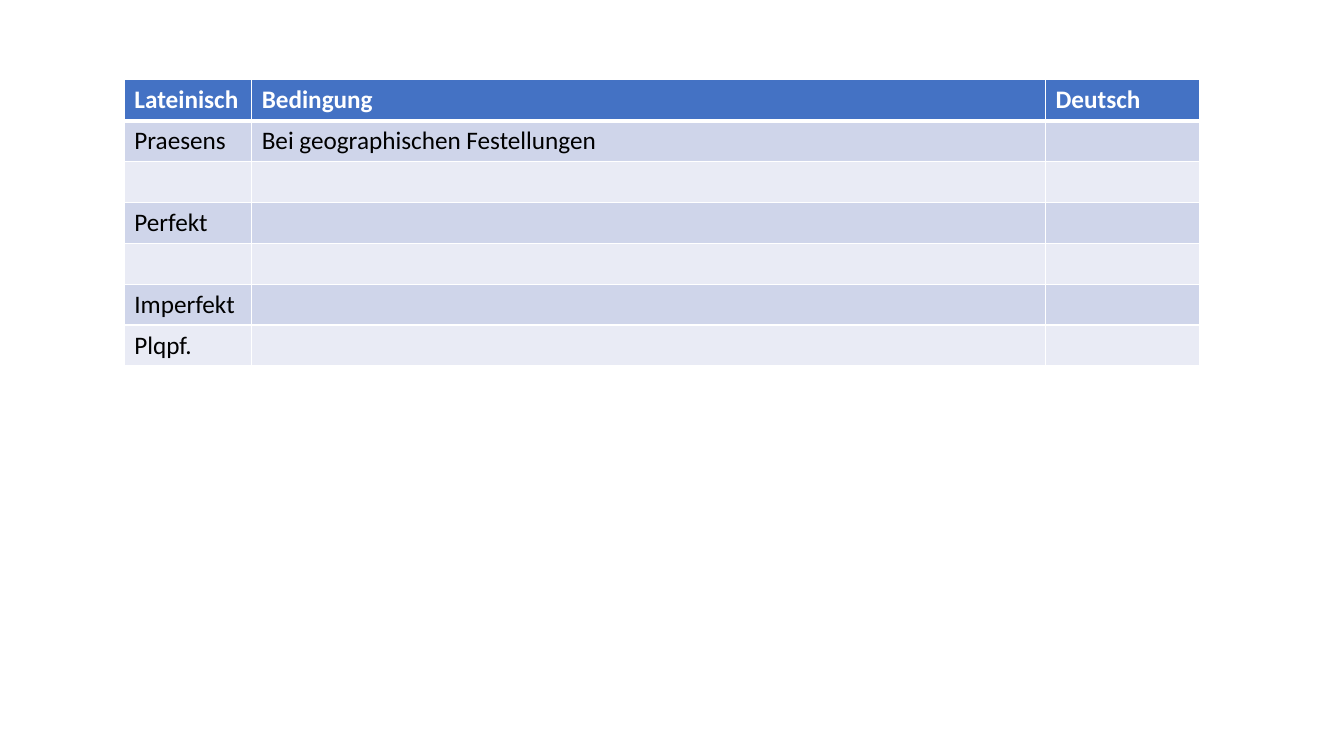
from lxml import etree
from pptx import Presentation
from pptx import util as u
from pptx.dml import color
from pptx.oxml import ns

HUES = {"head": "4472C4", "odd": "CFD5EA", "even": "E9EBF5",
        "white": "FFFFFF", "black": "000000"}


class Sheet:
    font = "Calibri"
    size = 18

    def __init__(self, slide):
        self.slide = slide

    def hue(self, name):
        return color.RGBColor.from_string(HUES[name])

    def edge(self, cell, side, width):
        props = cell._tc.get_or_add_tcPr()
        line = etree.SubElement(props, ns.qn(f"a:ln{side}"), w=str(u.Pt(width)))
        fill = etree.SubElement(line, ns.qn("a:solidFill"))
        etree.SubElement(fill, ns.qn("a:srgbClr"), val=HUES["white"])

    def cell(self, cell, words, row):
        thick = {"T": 3 if row == 1 else 1, "B": 3 if row == 0 else 1}
        for side in "LRTB":
            self.edge(cell, side, thick.get(side, 1))
        band = "head" if row == 0 else "odd" if row % 2 else "even"
        cell.fill.solid()
        cell.fill.fore_color.rgb = self.hue(band)
        cell.text_frame.text = words
        para = cell.text_frame.paragraphs[0]
        para.font.size = u.Pt(self.size)
        for run in para.runs:
            run.font.name = self.font
            run.font.size = u.Pt(self.size)
            run.font.bold = row == 0
            run.font.color.rgb = self.hue("black" if row else "white")

    def table(self, left, top, widths, high, rows):
        frame = self.slide.shapes.add_table(
            len(rows), len(widths), u.Pt(left), u.Pt(top),
            u.Pt(sum(widths)), u.Pt(high * len(rows)))
        grid = frame.table
        for col, width in zip(grid.columns, widths):
            col.width = u.Pt(width)
        for r, words in enumerate(rows):
            grid.rows[r].height = u.Pt(high)
            for c, word in enumerate(words):
                self.cell(grid.cell(r, c), word, r)


def main():
    deck = Presentation()
    deck.slide_width, deck.slide_height = u.Pt(960), u.Pt(540)
    sheet = Sheet(deck.slides.add_slide(deck.slide_layouts[6]))
    tenses = [
        ("Lateinisch", "Bedingung", "Deutsch"),
        ("Praesens", "Bei geographischen Festellungen", ""),
        ("", "", ""),
        ("Perfekt", "", ""),
        ("", "", ""),
        ("Imperfekt", "", ""),
        ("Plqpf.", "", ""),
    ]
    sheet.table(88.8, 57, [91, 567, 110], 29.2, tenses)
    deck.save("out.pptx")


if __name__ == "__main__":
    main()
